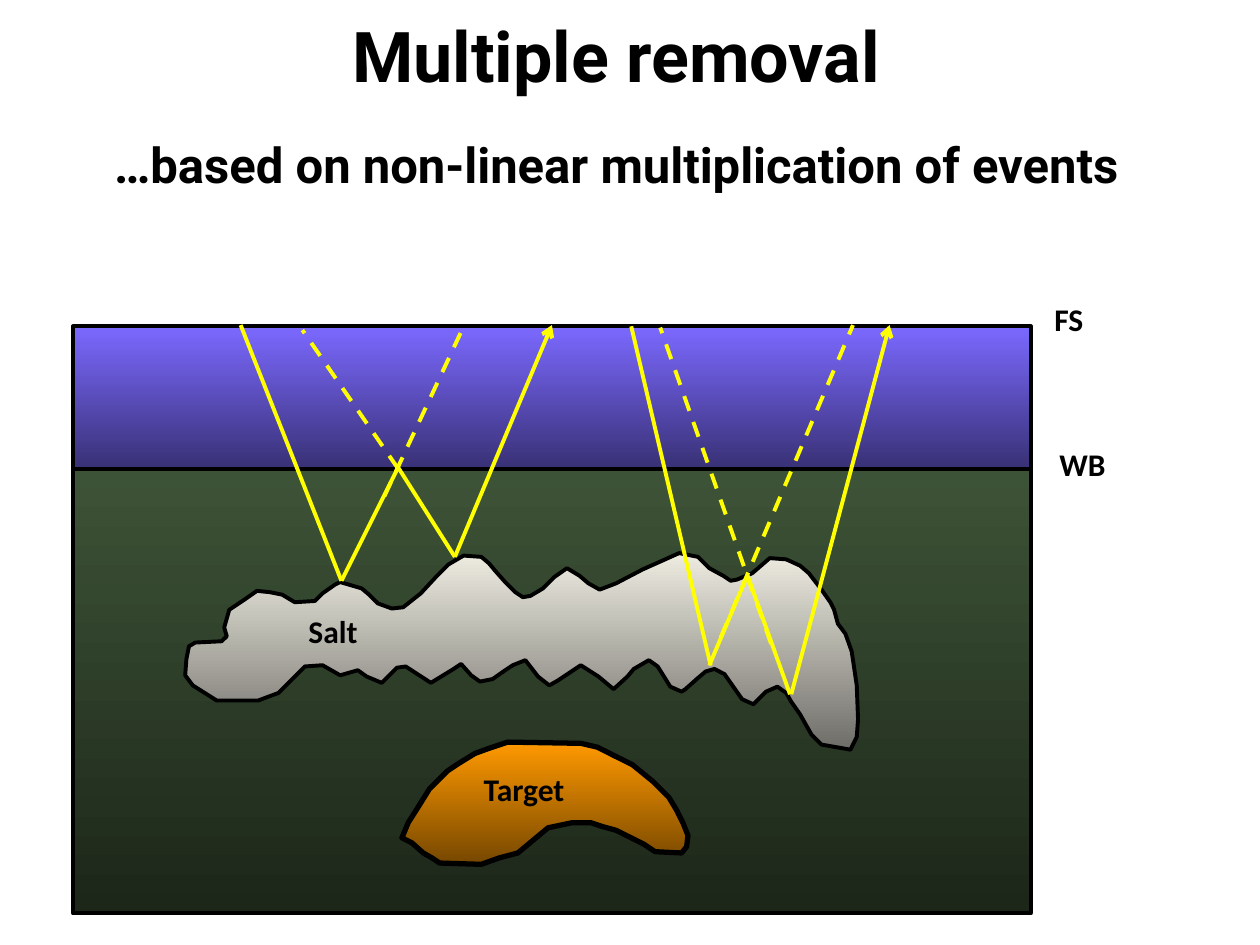
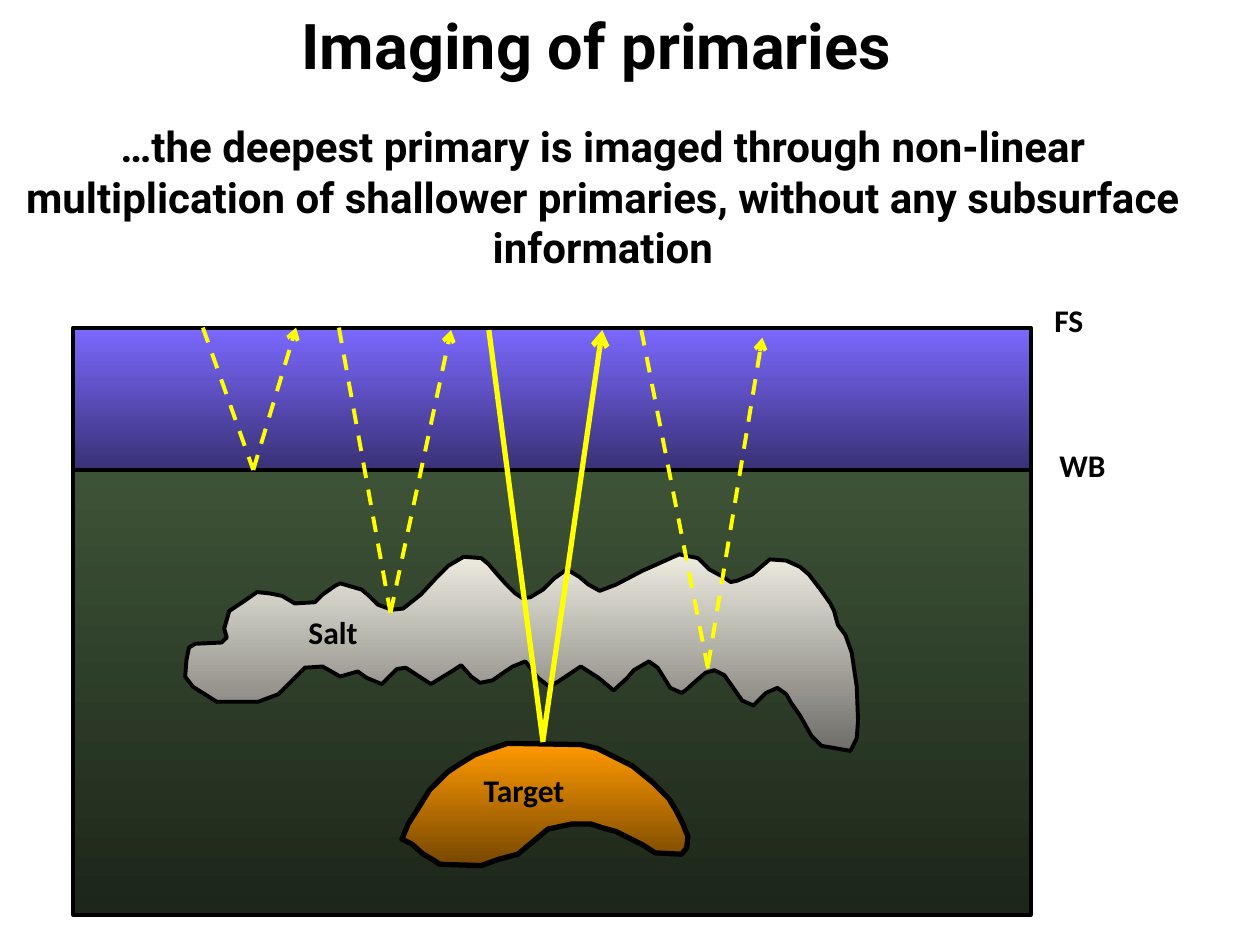
from dataclasses import dataclass

from lxml.etree import SubElement
from pptx import Presentation
from pptx.dml.color import RGBColor
from pptx.enum.dml import MSO_LINE
from pptx.enum.shapes import MSO_CONNECTOR, MSO_SHAPE
from pptx.enum.text import MSO_ANCHOR, MSO_AUTO_SIZE, PP_ALIGN
from pptx.oxml.ns import qn
from pptx.shapes.autoshape import Shape
from pptx.slide import Slide
from pptx.util import Emu, Pt

PX = 9144  # 100 px to the inch

BLACK = RGBColor(0x00, 0x00, 0x00)
YELLOW = RGBColor(0xFF, 0xFF, 0x00)
SEA = (RGBColor(0x7B, 0x69, 0xFF), RGBColor(0x39, 0x31, 0x76))
ROCK = (RGBColor(0x3D, 0x53, 0x37), RGBColor(0x1C, 0x26, 0x19))
PALE = (RGBColor(0xEE, 0xEC, 0xE1), RGBColor(0x6E, 0x6D, 0x68))
ORANGE = (RGBColor(0xFF, 0x99, 0x00), RGBColor(0x76, 0x47, 0x00))

Point = tuple[int, int]
Box = tuple[int, int, int, int]
Shades = tuple[RGBColor, RGBColor]


@dataclass(frozen=True)
class Layer:
    box: Box
    shades: Shades


@dataclass(frozen=True)
class Body:
    points: list[Point]
    shades: Shades
    width: float


@dataclass(frozen=True)
class Label:
    text: str
    box: Box


@dataclass(frozen=True)
class Ray:
    start: Point
    end: Point
    arrow: bool = False
    dash: bool = False
    width: float = 2.25


@dataclass(frozen=True)
class Heading:
    text: str
    box: Box
    size: int


@dataclass(frozen=True)
class Scene:
    title: Heading
    claim: Heading
    drop: int
    rays: list[Ray]


LAYERS = [
    Layer((58, 372, 760, 353), ROCK),
    Layer((58, 259, 760, 113), SEA),
]

SALT = Body([
    (178, 498), (182, 484), (194, 476), (204, 469), (214, 470), (224, 472),
    (234, 478), (250, 477), (256, 471), (266, 464), (270, 462), (287, 467),
    (293, 472), (300, 479), (311, 483), (320, 482), (334, 471), (346, 458),
    (356, 448), (368, 441), (382, 442), (388, 447), (393, 453), (401, 462),
    (409, 470), (415, 474), (421, 473), (431, 467), (440, 458), (450, 451),
    (460, 457), (467, 463), (476, 468), (489, 463), (510, 452), (528, 444),
    (539, 439), (554, 442), (563, 451), (574, 457), (580, 461), (585, 460),
    (597, 455), (611, 443), (624, 444), (635, 449), (642, 455), (652, 468),
    (659, 478), (662, 484), (665, 495), (671, 503), (676, 517), (680, 544),
    (681, 571), (680, 585), (675, 595), (652, 591), (644, 583), (635, 567),
    (628, 557), (624, 550), (617, 545), (608, 549), (598, 559), (589, 555),
    (582, 545), (575, 535), (567, 531), (560, 533), (553, 539), (544, 547),
    (541, 549), (532, 545), (522, 529), (515, 524), (503, 531), (498, 537),
    (487, 547), (475, 537), (461, 528), (443, 540), (436, 544), (427, 537),
    (417, 524), (407, 528), (401, 532), (391, 539), (381, 541), (374, 536),
    (366, 527), (360, 531), (342, 542), (322, 529), (315, 530), (303, 542),
    (291, 537), (284, 532), (270, 536), (263, 532), (256, 528), (242, 529),
    (233, 538), (221, 550), (205, 556), (172, 556), (153, 544), (147, 536),
    (148, 523), (150, 513), (155, 510), (176, 509), (180, 505),
], PALE, 2.25)

TARGET = Body([
    (319, 665), (324, 653), (331, 642), (341, 626), (355, 612), (364, 606),
    (377, 598), (388, 594), (403, 589), (461, 590), (474, 593), (486, 599),
    (502, 607), (518, 620), (531, 633), (537, 643), (542, 653), (546, 663),
    (545, 672), (541, 677), (520, 676), (511, 670), (489, 659), (478, 656),
    (469, 653), (454, 653), (435, 657), (423, 667), (411, 677), (396, 681),
    (382, 686), (349, 685), (343, 681), (336, 677), (327, 669),
], ORANGE, 3)

LABELS = [
    Label("FS", (827, 233, 52, 40)),
    Label("WB", (831, 348, 62, 40)),
    Label("Salt", (235, 481, 66, 40)),
    Label("Target", (374, 606, 97, 40)),
]

SCENES = [
    Scene(
        Heading("Multiple removal", (20, 5, 938, 80), 40),
        Heading("…based on non-linear multiplication of events",
                (20, 102, 938, 56), 28),
        0,
        [
            Ray((191, 258), (271, 461)),
            Ray((271, 461), (316, 371)),
            Ray((316, 371), (361, 442)),
            Ray((361, 442), (438, 258), arrow=True),
            Ray((501, 259), (564, 528)),
            Ray((563, 528), (593, 457)),
            Ray((593, 456), (627, 551)),
            Ray((628, 551), (706, 258), arrow=True),
            Ray((305, 394), (369, 257), dash=True),
            Ray((316, 372), (240, 262), dash=True),
            Ray((612, 511), (524, 260), dash=True),
            Ray((572, 506), (677, 258), dash=True),
        ],
    ),
    Scene(
        Heading("Imaging of primaries", (3, 0, 941, 75), 36),
        Heading("…the deepest primary is imaged through non-linear "
                "multiplication of shallower primaries, without any "
                "subsurface information", (8, 91, 941, 129), 24),
        1,
        [
            Ray((161, 260), (201, 373), dash=True),
            Ray((201, 373), (235, 260), arrow=True, dash=True),
            Ray((269, 260), (310, 487), dash=True),
            Ray((310, 486), (358, 262), arrow=True, dash=True),
            Ray((388, 262), (431, 589), width=3),
            Ray((431, 587), (478, 262), arrow=True, width=3),
            Ray((509, 262), (562, 531), dash=True),
            Ray((562, 528), (605, 268), arrow=True, dash=True),
        ],
    ),
]


def scale(*sizes: int) -> list[Emu]:
    return [Emu(size * PX) for size in sizes]


def paint(shape: Shape, shades: Shades, width: float) -> None:
    """Fill from top to bottom and outline in black."""
    shape.shadow.inherit = False
    shape.fill.gradient()
    shape.fill.gradient_angle = 270
    for stop, shade in zip(shape.fill.gradient_stops, shades):
        stop.color.rgb = shade
    shape.line.color.rgb = BLACK
    shape.line.width = Pt(width)


def add_layer(slide: Slide, layer: Layer, drop: int) -> None:
    x, y, w, h = layer.box
    shape = slide.shapes.add_shape(MSO_SHAPE.RECTANGLE,
                                   *scale(x, y + drop, w, h))
    paint(shape, layer.shades, 2.25)


def add_body(slide: Slide, body: Body, drop: int) -> None:
    first, *rest = [scale(x, y + drop) for x, y in body.points]
    outline = slide.shapes.build_freeform(*first)
    outline.add_line_segments(rest, close=True)
    paint(outline.convert_to_shape(), body.shades, body.width)


def set_font(shape: Shape, name: str, size: int) -> None:
    for para in shape.text_frame.paragraphs:
        para.font.name = name
        para.font.size = Pt(size)
        para.font.bold = True
        para.font.color.rgb = BLACK


def add_label(slide: Slide, label: Label, drop: int) -> None:
    x, y, w, h = label.box
    shape = slide.shapes.add_textbox(*scale(x, y + drop, w, h))
    shape.text_frame.text = label.text
    shape.text_frame.word_wrap = False
    shape.text_frame.auto_size = MSO_AUTO_SIZE.SHAPE_TO_FIT_TEXT
    set_font(shape, "Calibri", 18)


def add_ray(slide: Slide, ray: Ray) -> None:
    link = slide.shapes.add_connector(MSO_CONNECTOR.STRAIGHT,
                                      *scale(*ray.start, *ray.end))
    link.line.color.rgb = YELLOW
    link.line.width = Pt(ray.width)
    if ray.dash:
        link.line.dash_style = MSO_LINE.DASH
    props = link._element.spPr
    if ray.arrow:
        SubElement(props.find(qn("a:ln")), qn("a:tailEnd"), type="arrow")
    SubElement(props, qn("a:effectLst"))


def set_heading(shape: Shape, heading: Heading) -> None:
    shape.left, shape.top, shape.width, shape.height = scale(*heading.box)
    frame = shape.text_frame
    frame.text = heading.text
    frame.word_wrap = True
    frame.auto_size = MSO_AUTO_SIZE.NONE
    frame.vertical_anchor = MSO_ANCHOR.TOP
    para = frame.paragraphs[0]
    para.alignment = PP_ALIGN.CENTER
    para.space_before = Pt(0)
    set_font(shape, "Roboto", heading.size)


def main() -> None:
    deck = Presentation()
    deck.slide_width, deck.slide_height = scale(1000, 750)
    for scene in SCENES:
        slide = deck.slides.add_slide(deck.slide_layouts[0])
        set_heading(slide.shapes.title, scene.title)
        set_heading(slide.placeholders[1], scene.claim)
        for layer in LAYERS:
            add_layer(slide, layer, scene.drop)
        for body in (SALT, TARGET):
            add_body(slide, body, scene.drop)
        for label in LABELS:
            add_label(slide, label, scene.drop)
        for ray in scene.rays:
            add_ray(slide, ray)
    deck.save("out.pptx")


if __name__ == "__main__":
    main()
